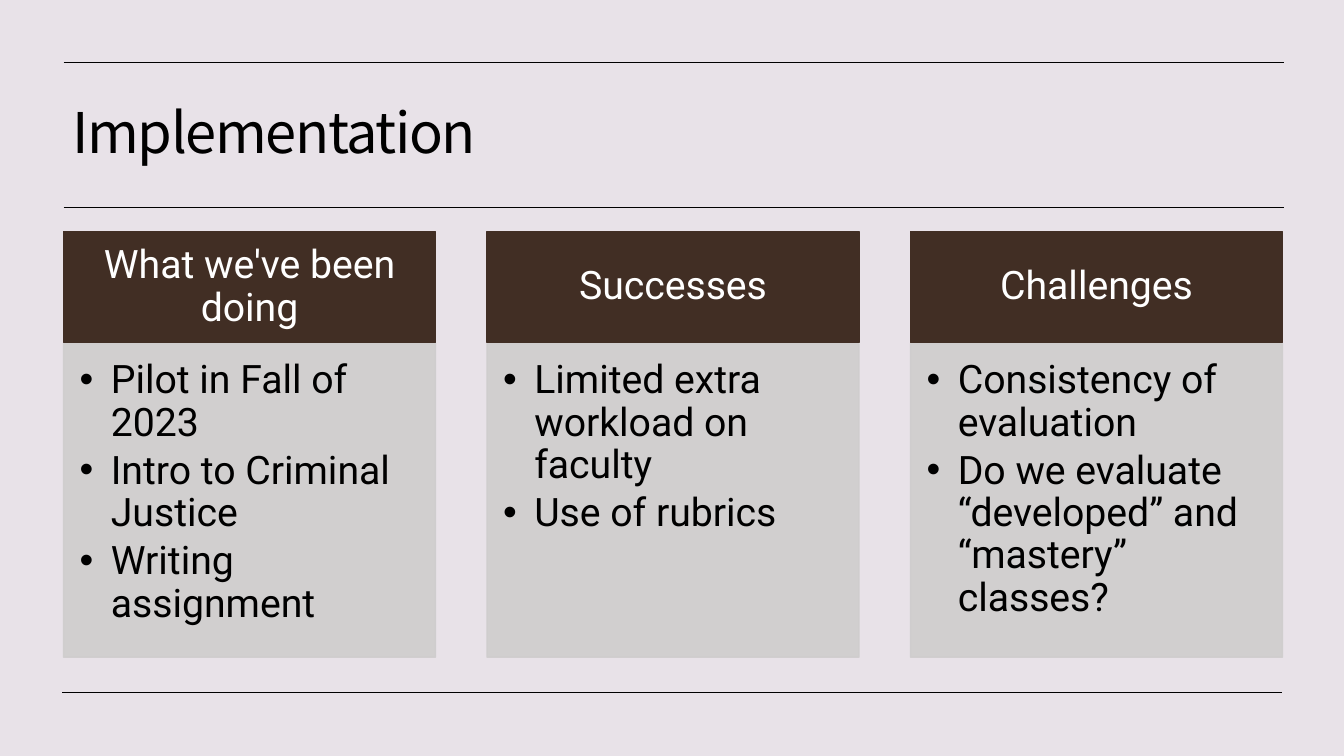
import pptx
import pptx.dml.color
import pptx.enum.shapes
import pptx.enum.text
import pptx.oxml.ns
import pptx.util
from lxml import etree

Inches = pptx.util.Inches
Pt = pptx.util.Pt
Align = pptx.enum.text.PP_ALIGN
Anchor = pptx.enum.text.MSO_ANCHOR

COLUMNS = [
    ("What we've been doing",
     ["Pilot in Fall of 2023", "Intro to Criminal Justice", "Writing assignment"]),
    ("Successes",
     ["Limited extra workload on faculty", "Use of rubrics"]),
    ("Challenges",
     ["Consistency of evaluation", "Do we evaluate “developed” and “mastery” classes?"]),
]


def color(value):
    """Turn a hex string into a colour."""
    return pptx.dml.color.RGBColor.from_string(value)


def add_child(parent, tag, **attributes):
    """Append a drawing element with the given attributes."""
    return etree.SubElement(parent, pptx.oxml.ns.qn(tag), **attributes)


def write_text(shape, lines, size=28, font="Roboto", fill="000000", align=Align.LEFT,
               anchor=Anchor.TOP, insets=(0.1, 0.05, 0.1, 0.05), space_after=0,
               bullet_indent=0, spacing=0):
    """Fill a shape with one paragraph per line in a single format."""
    frame = shape.text_frame
    frame.word_wrap = True
    frame.vertical_anchor = anchor
    frame.margin_left, frame.margin_top, frame.margin_right, frame.margin_bottom = map(Inches, insets)
    for index, line in enumerate(lines):
        paragraph = frame.add_paragraph() if index else frame.paragraphs[0]
        paragraph.alignment = align
        paragraph.line_spacing = 0.9
        paragraph.space_after = Pt(space_after)
        run = paragraph.add_run()
        run.text = line
        run.font.size = Pt(size)
        run.font.name = font
        run.font.color.rgb = color(fill)
        if spacing:
            run.font._element.set("spc", str(spacing * 100))
        if bullet_indent:
            properties = paragraph._p.get_or_add_pPr()
            properties.set("marL", str(Inches(bullet_indent)))
            properties.set("indent", str(-Inches(bullet_indent)))
            add_child(properties, "a:buFont", typeface="Arial")
            add_child(properties, "a:buChar", char="•")


def add_rule(slide, left, top, width):
    """Draw a thin horizontal rule."""
    rule = slide.shapes.add_connector(
        pptx.enum.shapes.MSO_CONNECTOR.STRAIGHT,
        Inches(left), Inches(top), Inches(left + width), Inches(top))
    rule.line.color.rgb = color("000000")
    rule.line.width = Pt(0.5)
    add_child(rule._element.spPr, "a:effectLst")


def add_panel(slide, left, top, width, height, fill, opacity=100):
    """Draw a rectangle whose fill and outline share a colour."""
    panel = slide.shapes.add_shape(
        pptx.enum.shapes.MSO_SHAPE.RECTANGLE,
        Inches(left), Inches(top), Inches(width), Inches(height))
    panel.shadow.inherit = False
    panel.fill.solid()
    panel.fill.fore_color.rgb = color(fill)
    panel.line.color.rgb = color(fill)
    panel.line.width = Pt(1)
    if opacity < 100:
        for swatch in panel._element.spPr.iter(pptx.oxml.ns.qn("a:srgbClr")):
            add_child(swatch, "a:alpha", val=str(opacity * 1000))
    return panel


def add_title(slide, left, top, width, height):
    """Place the slide title in its box."""
    title = slide.shapes.add_textbox(Inches(left), Inches(top), Inches(width), Inches(height))
    write_text(title, ["Implementation"], size=40, font="Noto Sans CJK KR",
               anchor=Anchor.MIDDLE, spacing=-1)


def add_column(slide, left, top, width, height, heading, points):
    """Stack a dark heading over a panel of bullet points."""
    heading_height = 1.1
    header = add_panel(slide, left, top, width, heading_height, "412E24")
    write_text(header, [heading], fill="FFFFFF", align=Align.CENTER, anchor=Anchor.MIDDLE,
               insets=(0.22, 0.12, 0.22, 0.12))
    body = add_panel(slide, left, top + heading_height + 0.01, width,
                     height - heading_height - 0.01, "CFCDCD", opacity=90)
    write_text(body, points, insets=(0.16, 0.16, 0.22, 0.24), space_after=4.2,
               bullet_indent=0.31)


def add_columns(slide, left, top, width, height):
    """Spread the columns evenly over the box."""
    column_width = 3.69
    pitch = (width - column_width) / (len(COLUMNS) - 1)
    for index, (heading, points) in enumerate(COLUMNS):
        add_column(slide, left + index * pitch, top, column_width, height, heading, points)


def main():
    """Build and save the slide."""
    presentation = pptx.Presentation()
    presentation.slide_width = Inches(13.33)
    presentation.slide_height = Inches(7.5)
    slide = presentation.slides.add_slide(presentation.slide_layouts[6])
    slide.background.fill.solid()
    slide.background.fill.fore_color.rgb = color("E8E2E8")
    for left, top in [(0.63, 0.62), (0.63, 2.06), (0.62, 6.87)]:
        add_rule(slide, left, top, 12.1)
    add_title(slide, 0.62, 0.75, 12.08, 1.19)
    add_columns(slide, 0.63, 2.3, 12.09, 4.22)
    presentation.save("out.pptx")


if __name__ == "__main__":
    main()
